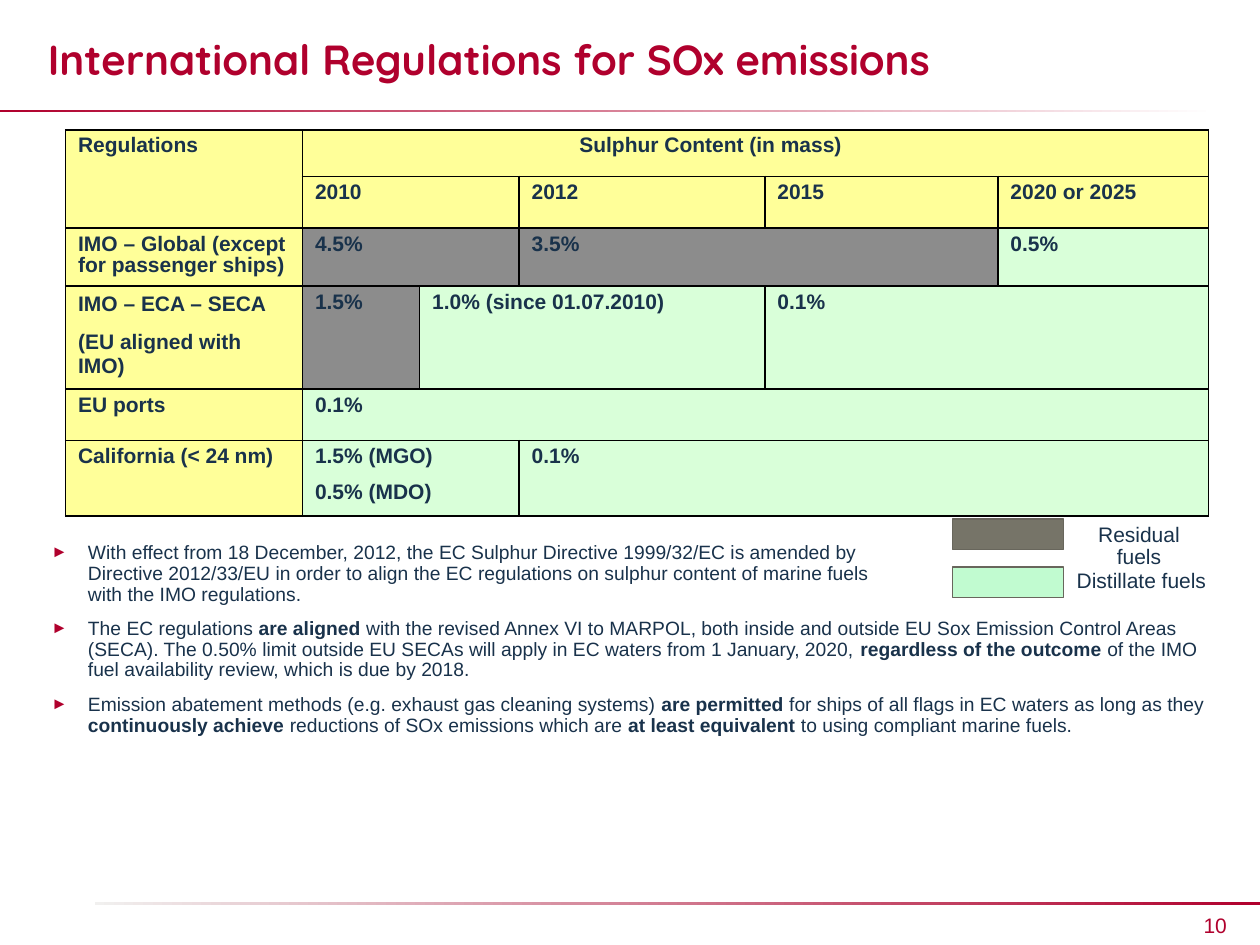
from lxml import etree
from pptx import Presentation
from pptx import util as u
from pptx.dml.color import RGBColor
from pptx.enum import shapes, text
from pptx.oxml.ns import qn

RED, NAVY = "B0002D", "19324B"
YELLOW, GREY, GREEN = "FFFF99", "8C8C8C", "D9FFD9"
CELL_FORMAT = {"name": "Arial", "size": u.Pt(12), "bold": True}
LABEL_FORMAT = {"name": "Arial", "size": u.Pt(12)}
BODY_FORMAT = {"name": "Arial", "size": u.Pt(11)}
TITLE_FORMAT = {"name": "Quicksand", "size": u.Pt(24), "bold": True}

COLUMNS = [1.88, 0.93, 0.79, 1.95, 1.85, 1.67]
ROWS = [0.37, 0.41, 0.46, 0.64, 0.41, 0.6]
HEADING = "\t\tSulphur Content (in mass)"
ECA = "IMO – ECA – SECA\n(EU aligned with IMO)"
CELLS = [
    (0, 0, 2, 1, YELLOW, "Regulations"),
    (0, 1, 1, 5, YELLOW, HEADING),
    (1, 1, 1, 2, YELLOW, "2010"),
    (1, 3, 1, 1, YELLOW, "2012"),
    (1, 4, 1, 1, YELLOW, "2015"),
    (1, 5, 1, 1, YELLOW, "2020 or 2025"),
    (2, 0, 1, 1, YELLOW, "IMO – Global (except for passenger ships)"),
    (2, 1, 1, 2, GREY, "4.5%"),
    (2, 3, 1, 2, GREY, "3.5%"),
    (2, 5, 1, 1, GREEN, "0.5%"),
    (3, 0, 1, 1, YELLOW, ECA),
    (3, 1, 1, 1, GREY, "1.5%"),
    (3, 2, 1, 2, GREEN, "1.0% (since 01.07.2010)"),
    (3, 4, 1, 2, GREEN, "0.1%"),
    (4, 0, 1, 1, YELLOW, "EU ports"),
    (4, 1, 1, 5, GREEN, "0.1%"),
    (5, 0, 1, 1, YELLOW, "California (< 24 nm)"),
    (5, 1, 1, 2, GREEN, "1.5% (MGO)\n0.5% (MDO)"),
    (5, 3, 1, 3, GREEN, "0.1%"),
]
BULLETS = [
    [
        "With effect from 18 December, 2012, the EC Sulphur Directive 1999/32/EC is amended by \n"
        "Directive 2012/33/EU in order to align the EC regulations on sulphur content of marine fuels \n"
        "with the IMO regulations."
    ],
    [
        "The EC regulations ",
        "are aligned ",
        "with the revised Annex VI to MARPOL, both inside and outside EU Sox Emission Control Areas "
        "(SECA). The 0.50% limit outside EU SECAs will apply in EC waters from 1 January, 2020, ",
        "regardless of the outcome ",
        "of the IMO fuel availability review, which is due by 2018.",
    ],
    [
        "Emission abatement methods (e.g. exhaust gas cleaning systems) ",
        "are permitted ",
        "for ships of all flags in EC waters as long as they ",
        "continuously achieve ",
        "reductions of SOx emissions which are ",
        "at least equivalent ",
        "to using compliant marine fuels.",
    ],
]


def rgb(value):
    return RGBColor.from_string(value)


def box(*lengths):
    return [u.Inches(length) for length in lengths]


def sub(parent, tag, **attributes):
    element = etree.SubElement(parent, qn(tag))
    for key, value in attributes.items():
        element.set(key, str(value))
    return element


def add_run(p, words, formats, color):
    r = p.add_run()
    r.text = words
    for key, value in formats.items():
        setattr(r.font, key, value)
    r.font.color.rgb = rgb(color)


def next_paragraph(tf, index, gap):
    if index == 0:
        return tf.paragraphs[0]
    p = tf.add_paragraph()
    p.space_before = u.Pt(gap)
    return p


def set_indent(p, inches):
    pPr = p._p.get_or_add_pPr()
    pPr.set("marL", str(u.Inches(inches)))
    pPr.set("indent", str(-u.Inches(inches)))
    return pPr


def add_title(s, words):
    sp = s.shapes.title
    sp.left, sp.top, sp.width, sp.height = box(0.28, 0.11, 8.63, 0.72)
    tf = sp.text_frame
    tf.vertical_anchor = text.MSO_ANCHOR.MIDDLE
    p = tf.paragraphs[0]
    p.alignment = text.PP_ALIGN.LEFT
    set_indent(p, 0.5)
    add_run(p, words, TITLE_FORMAT, RED)


def add_rectangle(s, at):
    sp = s.shapes.add_shape(shapes.MSO_SHAPE.RECTANGLE, *box(*at))
    sp.shadow.inherit = False
    return sp


def add_rule(s, at, colors):
    sp = add_rectangle(s, at)
    sp.line.fill.background()
    sp.fill.gradient()
    sp.fill.gradient_angle = 0
    for stop, color in zip(sp.fill.gradient_stops, colors):
        stop.color.rgb = rgb(color)


def add_swatch(s, at, color):
    sp = add_rectangle(s, at)
    sp.fill.solid()
    sp.fill.fore_color.rgb = rgb(color)
    sp.line.color.rgb = rgb("68665C")
    sp.line.width = u.Pt(0.75)


def add_label(s, at, words, color, spacing=None):
    tf = s.shapes.add_textbox(*box(*at)).text_frame
    tf.word_wrap = True
    p = tf.paragraphs[0]
    p.alignment = text.PP_ALIGN.CENTER
    p.line_spacing = spacing
    add_run(p, words, LABEL_FORMAT, color)


def add_borders(cell):
    tcPr = cell._tc.get_or_add_tcPr()
    for side in ("a:lnL", "a:lnR", "a:lnT", "a:lnB"):
        line = sub(tcPr, side, w=u.Pt(1))
        sub(sub(line, "a:solidFill"), "a:srgbClr", val="000000")


def fill_cell(cell, words, color):
    cell.fill.solid()
    cell.fill.fore_color.rgb = rgb(color)
    for i, line in enumerate(words.split("\n")):
        p = next_paragraph(cell.text_frame, i, 8.4)
        p.line_spacing = 1.0 if words == ECA else 0.9
        if words == HEADING:
            tabs = sub(p._p.get_or_add_pPr(), "a:tabLst")
            for position, align in ((1.09, "l"), (3.14, "ctr")):
                sub(tabs, "a:tab", pos=u.Inches(position), algn=align)
        add_run(p, line, CELL_FORMAT, NAVY)


def add_regulations(s):
    at = box(0.52, 1.03, sum(COLUMNS), sum(ROWS))
    table = s.shapes.add_table(len(ROWS), len(COLUMNS), *at).table
    for column, width in zip(table.columns, COLUMNS):
        column.width = u.Inches(width)
    for row, height in zip(table.rows, ROWS):
        row.height = u.Inches(height)
    for cell in table.iter_cells():
        add_borders(cell)
    for row, col, down, across, color, words in CELLS:
        cell = table.cell(row, col)
        if down * across > 1:
            cell.merge(table.cell(row + down - 1, col + across - 1))
        fill_cell(cell, words, color)


def add_bullets(s, at):
    tf = s.shapes.add_textbox(*box(*at)).text_frame
    tf.word_wrap = True
    for i, parts in enumerate(BULLETS):
        p = next_paragraph(tf, i, 7.7)
        p.line_spacing = 0.9
        pPr = set_indent(p, 0.29)
        sub(sub(pPr, "a:buClr"), "a:srgbClr", val=RED)
        sub(pPr, "a:buSzPct", val=85000)
        sub(pPr, "a:buFont", typeface="Arial")
        sub(pPr, "a:buChar", char="►")
        for j, part in enumerate(parts):
            for k, line in enumerate(part.split("\n")):
                if k:
                    p.add_line_break()
                add_run(p, line, {**BODY_FORMAT, "bold": j % 2 == 1}, NAVY)


def main():
    prs = Presentation()
    prs.slide_width, prs.slide_height = box(10, 7.5)
    s = prs.slides.add_slide(prs.slide_layouts[5])
    add_rule(s, (0, 0.87, 9.65, 0.02), (RED, "FFFFFF"))
    add_label(s, (9.3, 7.19, 0.69, 0.3), "10", RED)
    add_rule(s, (0.75, 7.16, 9.25, 0.02), ("F1F0EF", RED))
    add_title(s, "International Regulations for SOx emissions")
    add_regulations(s)
    add_swatch(s, (7.56, 4.12, 0.88, 0.24), "767468")
    add_swatch(s, (7.56, 4.5, 0.88, 0.24), "C1FBD0")
    add_label(s, (8.44, 4.11, 1.2, 0.28), "Residual fuels", NAVY, 0.9)
    add_label(s, (8.43, 4.48, 1.26, 0.28), "Distillate fuels", NAVY, 0.9)
    add_bullets(s, (0.31, 4.26, 9.36, 2.8))
    prs.save("out.pptx")


if __name__ == "__main__":
    main()
